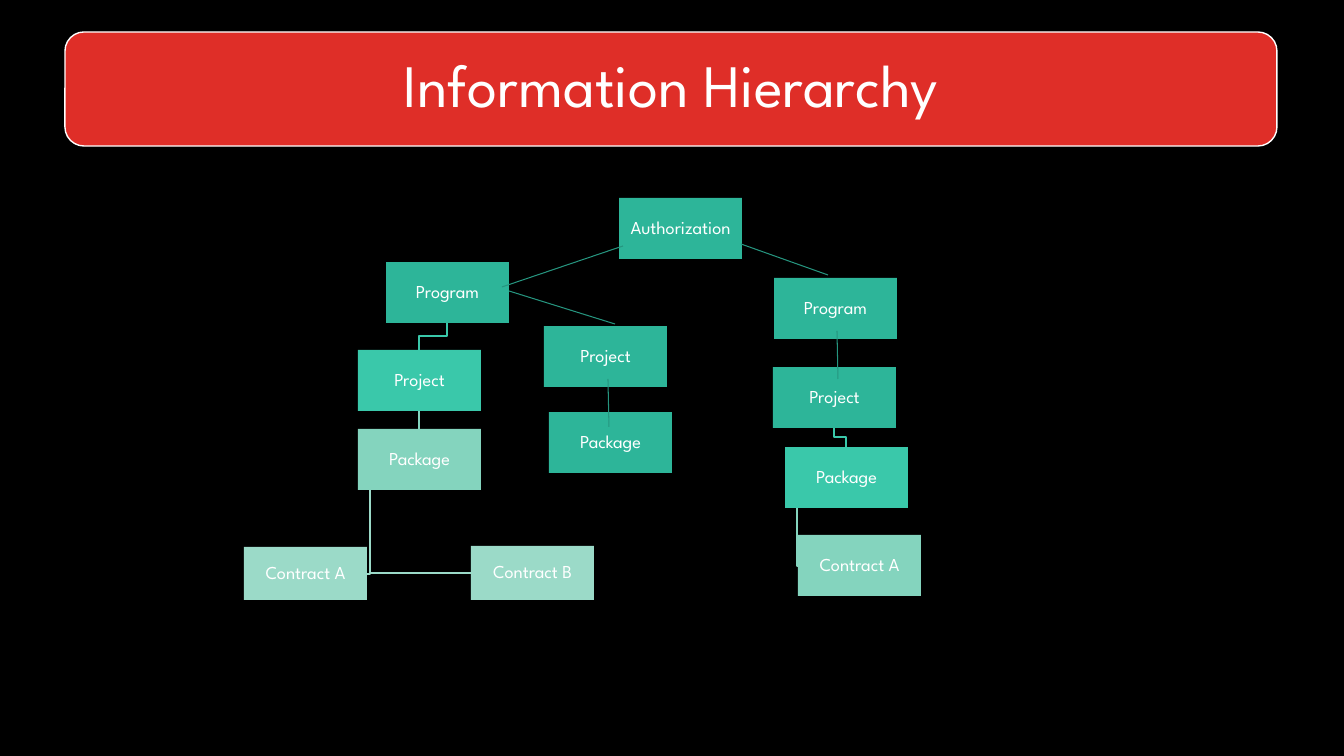
from lxml import etree
from pptx import Presentation
from pptx.dml.color import RGBColor
from pptx.enum.shapes import MSO_CONNECTOR, MSO_SHAPE
from pptx.enum.text import MSO_ANCHOR, MSO_AUTO_SIZE, PP_ALIGN
from pptx.oxml.ns import qn
from pptx.util import Pt

RECTANGLE, ROUNDED = MSO_SHAPE.RECTANGLE, MSO_SHAPE.ROUNDED_RECTANGLE
STRAIGHT = MSO_CONNECTOR.STRAIGHT
CENTER, MIDDLE = PP_ALIGN.CENTER, MSO_ANCHOR.MIDDLE

SCALE = 914400 / 100.8  # EMU per px
FONT = "League Spartan"
COLORS = {
    "black": "000000", "white": "FFFFFF", "red": "DF2E28", "link": "26957F",
    "deep": "2DB599", "mid": "3AC8AA", "light": "84D4BE", "pale": "9BDAC8",
}

# Content
TITLE = "Information Hierarchy"
BANNER = (65, 32, 1212, 114)
BOX_WIDTH, BOX_HEIGHT = 123, 61
STEM_INSET = 12  # distance of a side stem from the parent's left edge

# key: (label, colour, left, top, height)
BOXES = {
    "authorization": ("Authorization", "deep", 619, 198, BOX_HEIGHT),
    "left program": ("Program", "deep", 386, 262, BOX_HEIGHT),
    "left project": ("Project", "mid", 358, 350, BOX_HEIGHT),
    "left package": ("Package", "light", 358, 429, BOX_HEIGHT),
    "left contract A": ("Contract A", "pale", 244, 547, 53),
    "left contract B": ("Contract B", "pale", 471, 546, 54),
    "right program": ("Program", "deep", 774, 278, BOX_HEIGHT),
    "right project": ("Project", "deep", 773, 367, BOX_HEIGHT),
    "right package": ("Package", "mid", 785, 447, BOX_HEIGHT),
    "right contract A": ("Contract A", "light", 798, 535, BOX_HEIGHT),
    "middle package": ("Package", "deep", 549, 412, BOX_HEIGHT),
    "middle project": ("Project", "deep", 544, 326, BOX_HEIGHT),
}
# (parent, child, colour)
DROPS = [
    ("right project", "right package", "mid"),
    ("left project", "left package", "light"),
    ("left program", "left project", "mid"),
]
STEMS = [
    ("right package", "right contract A", "light"),
    ("left package", "left contract B", "pale"),
    ("left package", "left contract A", "pale"),
]
# Free-standing links: from x, y to x, y
LINKS = [
    (837, 331, 838, 379),
    (741, 244, 828, 275),
    (502, 287, 623, 246),
    (509, 291, 615, 324),
    (608, 379, 609, 427),
]


def emu(*lengths):
    return [round(length * SCALE) for length in lengths]


def color(name):
    return RGBColor.from_string(COLORS[name])


def write(shape, text, size, inset):
    frame = shape.text_frame
    frame.word_wrap = True
    frame.auto_size = MSO_AUTO_SIZE.NONE
    frame.vertical_anchor = MIDDLE
    frame.margin_left = frame.margin_right = emu(inset)[0]
    frame.margin_top = frame.margin_bottom = emu(inset)[0]
    para = frame.paragraphs[0]
    para.alignment = CENTER
    para.line_spacing = 0.9
    span = para.add_run()
    span.text = text
    span.font.name = FONT
    span.font.size = Pt(size)
    span.font.color.rgb = color("white")


def add_block(kind, bounds, fill, line=None):
    block = slide.shapes.add_shape(kind, *emu(*bounds))
    block.shadow.inherit = False
    block.fill.solid()
    block.fill.fore_color.rgb = color(fill)
    if line:
        block.line.color.rgb = color(line)
        block.line.width = Pt(1)
    else:
        block.line.fill.background()
    return block


def add_line(points, line, width):
    """Draw a straight connector for two points, an open elbow for more."""
    if len(points) == 2:
        shape = slide.shapes.add_connector(STRAIGHT, *emu(*points[0], *points[1]))
        etree.SubElement(shape._element.spPr, qn("a:effectLst"))
    else:
        builder = slide.shapes.build_freeform(*points[0], scale=SCALE)
        builder.add_line_segments(points[1:], close=False)
        shape = builder.convert_to_shape()
        shape.fill.background()
        shape.shadow.inherit = False
    shape.line.color.rgb = color(line)
    shape.line.width = Pt(width)


def drop_points(parent, child):
    """From the parent's bottom centre to the child's top centre."""
    _, _, left, top, height = BOXES[parent]
    _, _, child_left, child_top, _ = BOXES[child]
    start, end = left + BOX_WIDTH // 2, child_left + BOX_WIDTH // 2
    bottom = top + height
    if start == end:
        return [(start, bottom), (end, child_top)]
    middle = (bottom + child_top) // 2
    return [(start, bottom), (start, middle), (end, middle), (end, child_top)]


def stem_points(parent, child):
    """Down from the parent's left part, then to the child's nearer side."""
    _, _, left, top, height = BOXES[parent]
    _, _, child_left, child_top, child_height = BOXES[child]
    x, y = left + STEM_INSET, child_top + (child_height + 1) // 2
    side = child_left if child_left > x else child_left + BOX_WIDTH
    return [(x, top + height), (x, y), (side, y)]


deck = Presentation()
deck.slide_width, deck.slide_height = emu(1344, 756)
slide = deck.slides.add_slide(deck.slide_layouts[5])
slide.background.fill.solid()
slide.background.fill.fore_color.rgb = color("black")

# Title banner, with the title placeholder raised above it
add_block(ROUNDED, BANNER, "red", "white")
title = slide.shapes.title
title.left, title.top, title.width, title.height = emu(71, 37, 1200, 103)
write(title, TITLE, 43, 18)
slide.shapes._spTree.append(title._element)

# Elbows behind the boxes
for parent, child, line in STEMS:
    add_line(stem_points(parent, child), line, 1)
for parent, child, line in DROPS:
    add_line(drop_points(parent, child), line, 1)

# Hierarchy boxes
for label, fill, left, top, height in BOXES.values():
    box = add_block(RECTANGLE, (left, top, BOX_WIDTH, height), fill)
    write(box, label, 13, 1)

# Links over the boxes
for x1, y1, x2, y2 in LINKS:
    add_line([(x1, y1), (x2, y2)], "link", 0.75)

deck.save("out.pptx")
